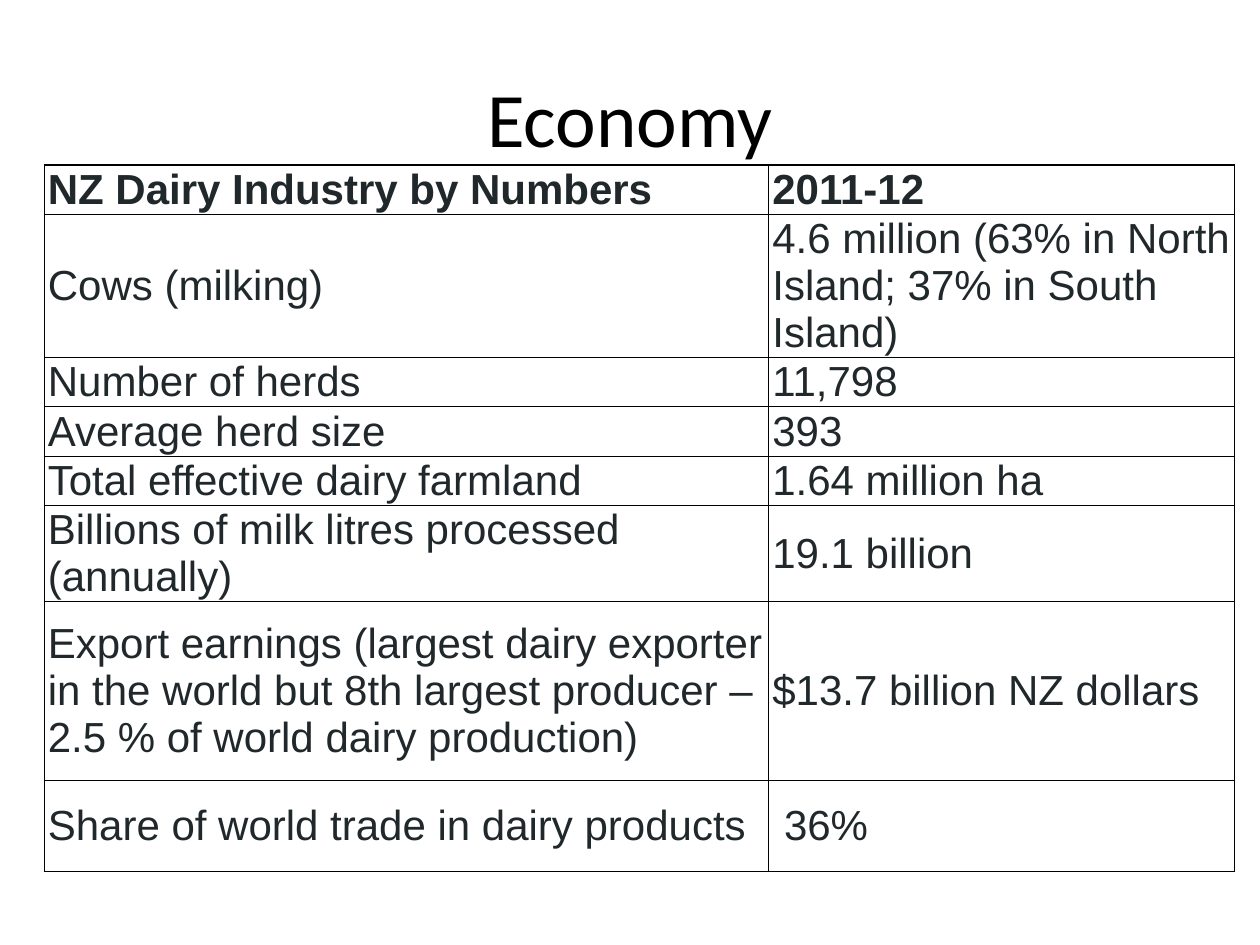
import pptx
import pptx.util
import pptx.dml.color
import pptx.enum.text
import lxml.etree

PX = 9144  # 100 px to the inch
NS = "http://schemas.openxmlformats.org/drawingml/2006/main"
MIDDLE = pptx.enum.text.MSO_ANCHOR.MIDDLE

COLS = [575, 370]
ROWS = [
    (37, "NZ Dairy Industry by Numbers", "2011-12"),
    (107, "Cows (milking)",
     "4.6 million (63% in North Island; 37% in South Island)"),
    (37, "Number of herds", "11,798"),
    (37, "Average herd size", "393"),
    (37, "Total effective dairy farmland", "1.64 million ha"),
    (72, "Billions of milk litres processed (annually)", "19.1 billion"),
    (142, "Export earnings (largest dairy exporter in the world but "
          "8th largest producer – 2.5 % of world dairy production)",
     "$13.7 billion NZ dollars"),
    (72, "Share of world trade in dairy products", " 36%"),
]


def px(n):
    return pptx.util.Emu(n * PX)


def color(text):
    return pptx.dml.color.RGBColor.from_string(text)


def style(para, name, size, hue, bold=False):
    for run in para.runs:
        font = run.font
        font.name, font.size, font.bold = name, pptx.util.Pt(size), bold
        font.color.rgb = color(hue)


def border(cell, hue, width):
    props = cell._tc.get_or_add_tcPr()
    for spot, side in enumerate(("lnL", "lnR", "lnT", "lnB")):
        line = lxml.etree.Element(f"{{{NS}}}{side}",
                                  w=str(pptx.util.Pt(width)))
        fill = lxml.etree.SubElement(line, f"{{{NS}}}solidFill")
        lxml.etree.SubElement(fill, f"{{{NS}}}srgbClr", val=hue)
        props.insert(spot, line)  # lines must come before the fill


def add_title(slide, x, y, w, h):
    title = slide.shapes.title
    title.left, title.top, title.width, title.height = map(px, (x, y, w, h))
    frame = title.text_frame
    frame.text = "Economy"
    frame.vertical_anchor = MIDDLE
    para = frame.paragraphs[0]
    para.alignment = pptx.enum.text.PP_ALIGN.CENTER
    style(para, "Calibri", 44, "000000")


def add_facts(slide, x, y):
    high = sum(row[0] for row in ROWS)
    table = slide.shapes.add_table(len(ROWS), len(COLS), px(x), px(y),
                                   px(sum(COLS)), px(high)).table
    table.horz_banding = table.first_row = False
    for col, wide in zip(table.columns, COLS):
        col.width = px(wide)
    for r, (tall, *texts) in enumerate(ROWS):
        table.rows[r].height = px(tall)
        for c, text in enumerate(texts):
            cell = table.cell(r, c)
            cell.text_frame.text = text
            cell.vertical_anchor = MIDDLE
            cell.margin_left = cell.margin_right = px(3)
            cell.margin_top = cell.margin_bottom = px(1)
            cell.fill.background()
            border(cell, "000000", 0.75)
            style(cell.text_frame.paragraphs[0], "Arial", 24, "20282B",
                  bold=r == 0)


def main():
    deck = pptx.Presentation()
    deck.slide_width, deck.slide_height = px(1000), px(750)
    slide = deck.slides.add_slide(deck.slide_layouts[5])  # title only
    add_title(slide, 50, 30, 900, 125)
    add_facts(slide, 35, 131)
    deck.save("out.pptx")


if __name__ == "__main__":
    main()
